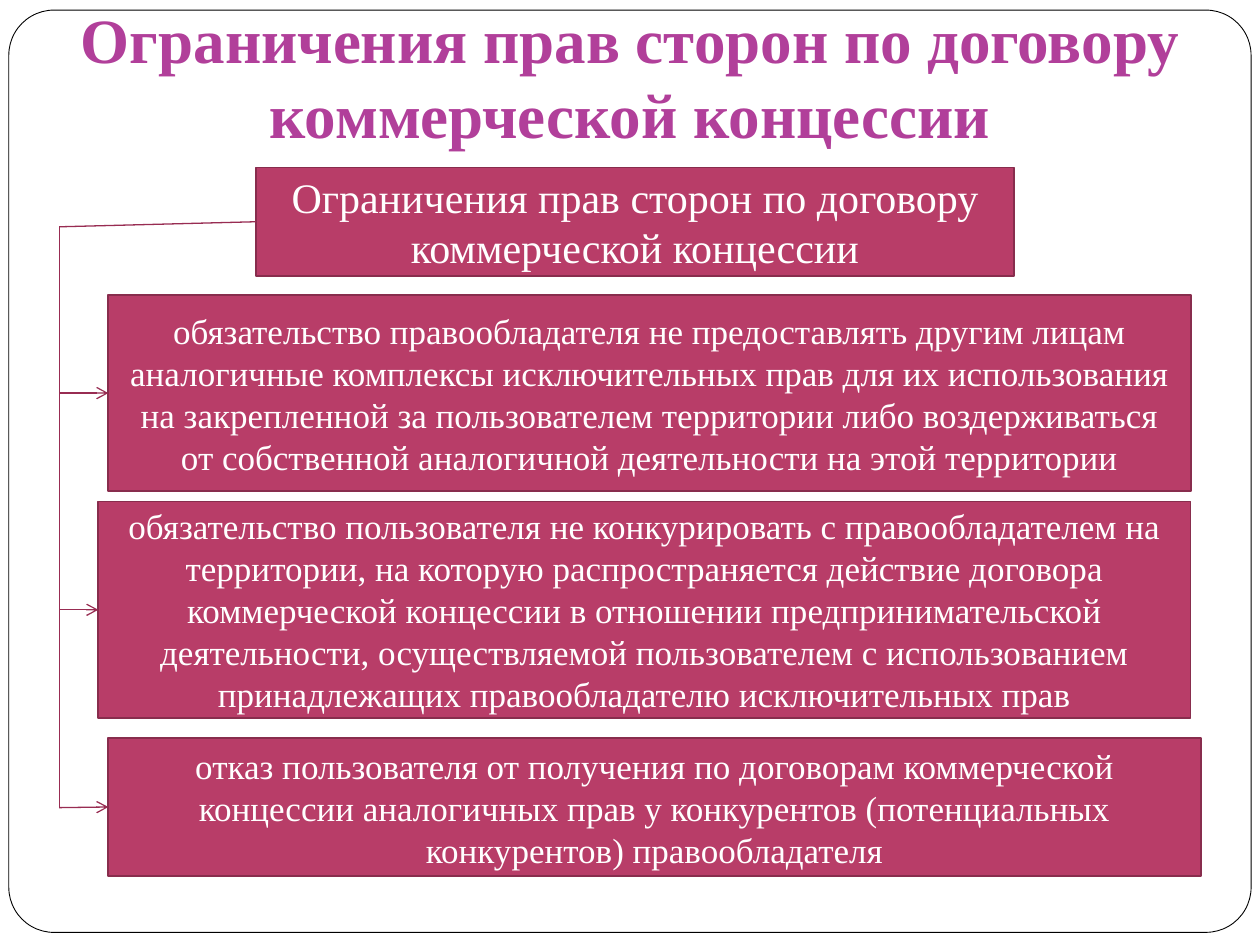
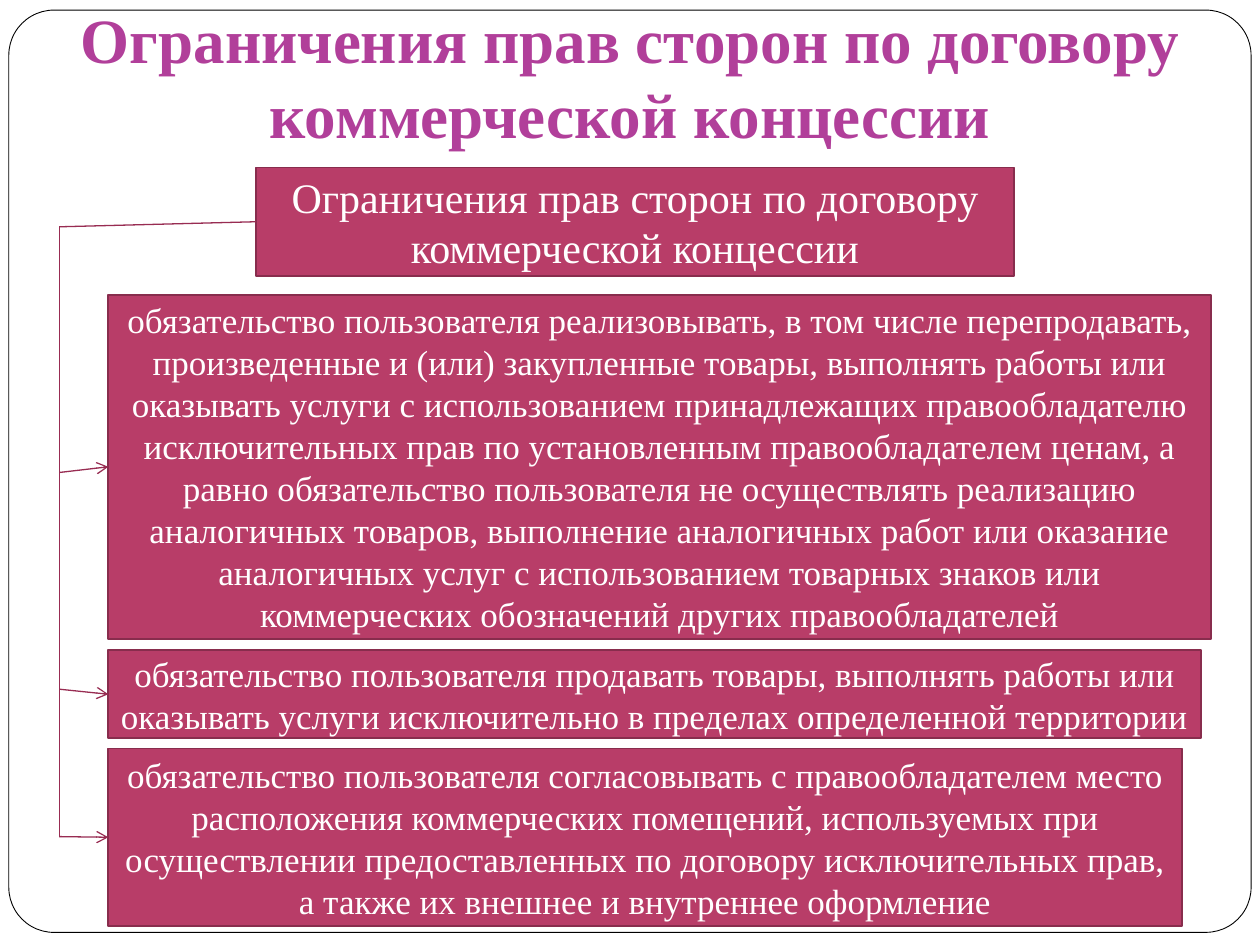
from dataclasses import dataclass

from lxml.etree import SubElement
from pptx import Presentation
from pptx.dml.color import RGBColor
from pptx.enum.shapes import MSO_CONNECTOR as Connector, MSO_SHAPE as Shape
from pptx.enum.text import MSO_ANCHOR as Anchor, MSO_AUTO_SIZE as AutoSize, PP_ALIGN as Align
from pptx.oxml.ns import qn
from pptx.util import Inches, Pt

COLOURS = {
    "white": "FFFFFF",
    "frame": "000000",
    "title": "B13F9A",
    "box": "B83D68",
    "box_edge": "882D4D",
    "connector": "982C52",
}
FONT = "Times New Roman"
HEADING = "Ограничения прав сторон по договору коммерческой концессии"
TITLE_ONLY = 5
LEFT_SIDE = 1
TRUNK_X, TRUNK_TOP = 0.47, 1.8


@dataclass(frozen=True)
class Box:
    text: str
    left: float
    top: float
    width: float
    height: float
    size: int = 20


@dataclass(frozen=True)
class Restriction:
    box: Box
    branch_y: float  # where its arrow leaves the trunk


HEADER = Box(HEADING, 2.03, 1.33, 6.02, 0.86, size=24)

PAGES = [
    [
        Restriction(Box(
            "обязательство правообладателя не предоставлять другим лицам аналогичные "
            "комплексы исключительных прав для их использования на закрепленной за "
            "пользователем территории либо воздерживаться от собственной аналогичной "
            "деятельности на этой территории",
            0.86, 2.34, 8.59, 1.56), 3.12),
        Restriction(Box(
            "обязательство пользователя не конкурировать с правообладателем на "
            "территории, на которую распространяется действие договора коммерческой "
            "концессии в отношении предпринимательской деятельности, осуществляемой "
            "пользователем с использованием принадлежащих правообладателю "
            "исключительных прав",
            0.78, 3.98, 8.67, 1.72), 4.84),
        Restriction(Box(
            "отказ пользователя от получения по договорам коммерческой концессии "
            "аналогичных прав у конкурентов (потенциальных конкурентов) "
            "правообладателя",
            0.86, 5.86, 8.67, 1.09), 6.41),
    ],
    [
        Restriction(Box(
            "обязательство пользователя реализовывать, в том числе перепродавать, "
            "произведенные и (или) закупленные товары, выполнять работы или оказывать "
            "услуги с использованием принадлежащих правообладателю исключительных прав "
            "по установленным правообладателем ценам, а равно обязательство "
            "пользователя не осуществлять реализацию аналогичных товаров, выполнение "
            "аналогичных работ или оказание аналогичных услуг с использованием "
            "товарных знаков или коммерческих обозначений других правообладателей",
            0.86, 2.34, 8.75, 2.73), 3.75),
        Restriction(Box(
            "обязательство пользователя продавать товары, выполнять работы или "
            "оказывать услуги исключительно в пределах определенной территории",
            0.86, 5.16, 8.67, 0.7), 5.47),
        Restriction(Box(
            "обязательство пользователя согласовывать с правообладателем место "
            "расположения коммерческих помещений, используемых при осуществлении "
            "предоставленных по договору исключительных прав, а также их внешнее и "
            "внутреннее оформление",
            0.86, 5.94, 8.52, 1.41), 6.64),
    ],
]


def colour(name: str) -> RGBColor:
    return RGBColor.from_string(COLOURS[name])


def write(frame, text: str, size: int, ink: str, bold: bool = False) -> None:
    frame.text = text
    frame.word_wrap = True
    frame.vertical_anchor = Anchor.MIDDLE
    para = frame.paragraphs[0]
    para.alignment = Align.CENTER
    para.font.name = FONT
    para.font.size = Pt(size)
    para.font.bold = bold
    para.font.color.rgb = colour(ink)


def add_panel(page, kind, bounds: tuple, fill: str, edge: str, weight: float):
    panel = page.shapes.add_shape(kind, *map(Inches, bounds))
    panel.shadow.inherit = False
    panel.fill.solid()
    panel.fill.fore_color.rgb = colour(fill)
    panel.line.color.rgb = colour(edge)
    panel.line.width = Pt(weight)
    return panel


def add_frame(page) -> None:
    """Draw the rounded frame and hand it to the layout, which all slides share."""
    frame = add_panel(page, Shape.ROUNDED_RECTANGLE, (0.07, 0.08, 9.86, 7.32),
                      "white", "frame", 0.5)
    frame.adjustments[0] = 0.049
    page.slide_layout.shapes.element.insert(2, frame.element)


def set_title(page) -> None:
    title = page.shapes.title
    title.left, title.top, title.width, title.height = map(Inches, (0, 0, 10, 1.25))
    frame = title.text_frame
    write(frame, HEADING, 36, "title", bold=True)
    frame.auto_size = AutoSize.NONE
    frame.margin_left = frame.margin_right = frame.margin_bottom = Inches(0.1)
    frame.margin_top = Inches(0.05)


def add_box(page, box: Box):
    bounds = (box.left, box.top, box.width, box.height)
    shape = add_panel(page, Shape.RECTANGLE, bounds, "box", "box_edge", 1)
    write(shape.text_frame, box.text, box.size, "white")
    return shape


def add_line(page, start: tuple, end: tuple, arrow: bool = False):
    line = page.shapes.add_connector(Connector.STRAIGHT, *map(Inches, start + end))
    line.line.color.rgb = colour("connector")
    line.line.width = Pt(0.75)
    if arrow:
        SubElement(line.line._get_or_add_ln(), qn("a:tailEnd"), type="arrow")
    SubElement(line.element.spPr, qn("a:effectLst"))
    return line


def add_scheme(page, restrictions: list[Restriction]) -> None:
    """Draw the header, the trunk that runs down from it and its branches."""
    trunk_start = (TRUNK_X, TRUNK_TOP)
    header = add_box(page, HEADER)
    link = add_line(page, (HEADER.left, HEADER.top + HEADER.height / 2), trunk_start)
    link.begin_connect(header, LEFT_SIDE)
    add_line(page, trunk_start, (TRUNK_X, restrictions[-1].branch_y))
    for item in restrictions:
        box = item.box
        shape = add_box(page, box)
        branch = add_line(page, (TRUNK_X, item.branch_y),
                          (box.left, box.top + box.height / 2), arrow=True)
        branch.end_connect(shape, LEFT_SIDE)


def main() -> None:
    deck = Presentation()
    deck.slide_width, deck.slide_height = Inches(10), Inches(7.5)
    layout = deck.slide_layouts[TITLE_ONLY]
    for number, restrictions in enumerate(PAGES):
        page = deck.slides.add_slide(layout)
        if number == 0:
            add_frame(page)
        set_title(page)
        add_scheme(page, restrictions)
    deck.save("out.pptx")


if __name__ == "__main__":
    main()
